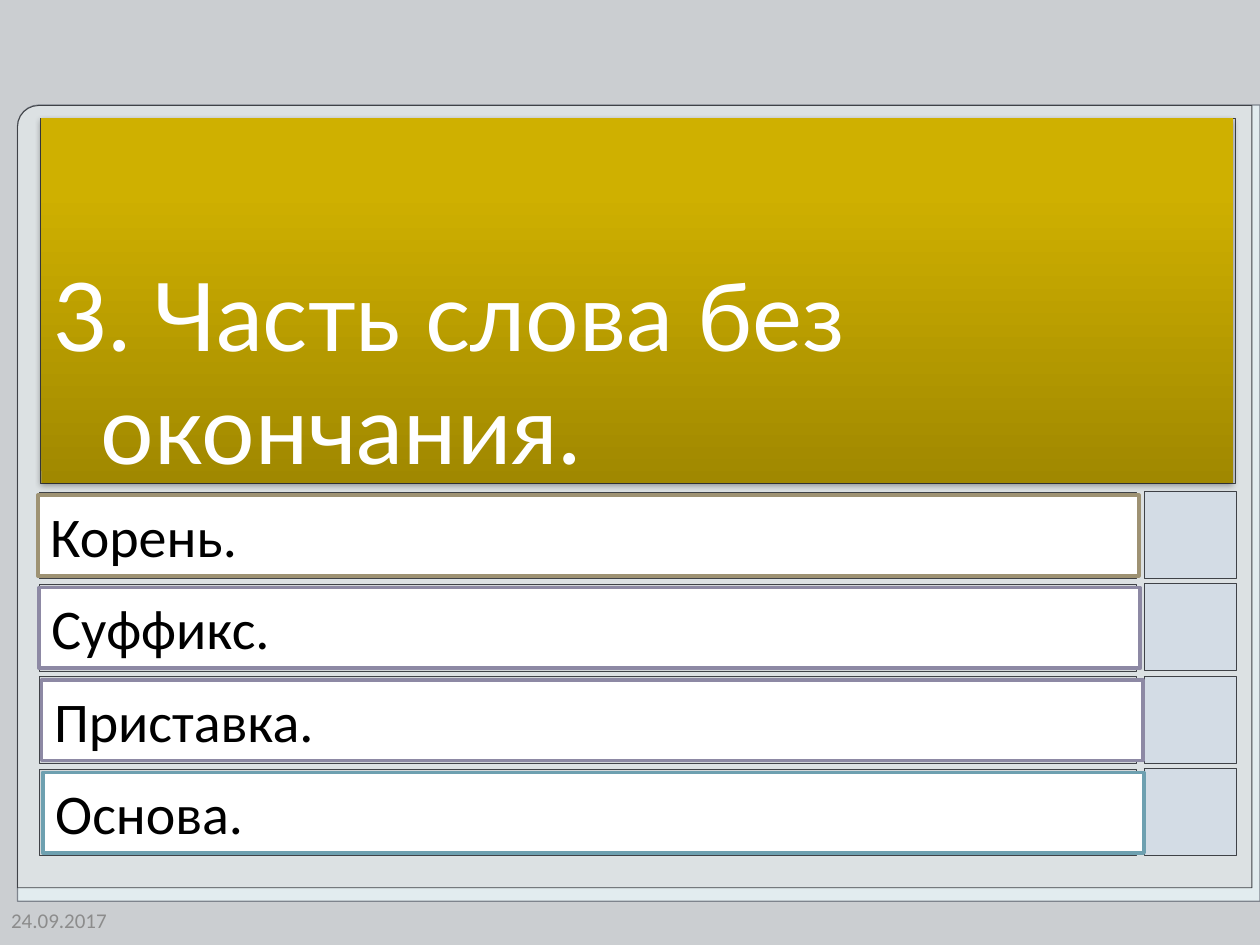
from dataclasses import dataclass

from lxml import etree
from pptx import Presentation
from pptx.dml.color import RGBColor
from pptx.enum import shapes, text
from pptx.oxml import ns, parse_xml
from pptx.util import Pt


@dataclass(frozen=True)
class Theme:
    background: str = "CBCED1"
    back_card: str = "E2ECEF"
    back_line: str = "7E848D"
    card: str = "D8D8D8"
    frame: str = "CBCED1"
    frame_line: str = "3F4247"
    tile: str = "CCD8E7"
    answer: str = "FFFFFF"
    answer_text: str = "000000"
    question_text: str = "FFFFFF"
    date_text: str = "8C8C8C"
    gradient: tuple = ((0, "A08800"), (80, "CFB000"), (100, "D0B100"))
    question_font: str = "Lato"
    body_font: str = "Calibri"
    question_size: float = 54
    answer_size: float = 32
    date_size: float = 12


THEME = Theme()
HANGING = 27
ROW_PITCH = 52.8
ANSWERS = [
    ("Корень.", 21.6, "9E9273"),
    ("Суффикс.", 22.3, "8D89A4"),
    ("Приставка.", 23.8, "8D89A4"),
    ("Основа.", 24.5, "6EA0B0"),
]


def add_panel(slide, box, fill, line=None, width=0.5, alpha=None,
              kind=shapes.MSO_SHAPE.RECTANGLE):
    """Add a flat shape; alpha is the opacity of its fill in percent."""
    shape = slide.shapes.add_shape(kind, *map(Pt, box))
    shape.shadow.inherit = False
    if fill:
        shape.fill.solid()
        shape.fill.fore_color.rgb = RGBColor.from_string(fill)
    if alpha:
        color = shape._element.spPr.find(".//" + ns.qn("a:srgbClr"))
        etree.SubElement(color, ns.qn("a:alpha")).set("val", str(alpha * 1000))
    if line:
        shape.line.color.rgb = RGBColor.from_string(line)
        shape.line.width = Pt(width)
    else:
        shape.line.fill.background()
    return shape


def add_card(slide, box, fill, line, width, alpha=None):
    """Add a panel whose top left corner is round."""
    shape = add_panel(slide, box, fill, line, width, alpha,
                      shapes.MSO_SHAPE.ROUND_1_RECTANGLE)
    shape.adjustments[0] = 0.027
    shape._element.spPr.find(ns.qn("a:xfrm")).set("flipH", "1")


def write(shape, wording, font, size, color, hanging=0, **frame_format):
    frame = shape.text_frame
    frame.word_wrap = True
    for name, value in frame_format.items():
        setattr(frame, name, value)
    paragraph = frame.paragraphs[0]
    paragraph.alignment = text.PP_ALIGN.LEFT
    if hanging:
        properties = paragraph._p.get_or_add_pPr()
        properties.set("marL", str(Pt(hanging)))
        properties.set("indent", str(-Pt(hanging)))
    run = paragraph.add_run()
    run.text = wording
    for name, value in {"name": font, "size": Pt(size)}.items():
        setattr(run.font, name, value)
    run.font.color.rgb = RGBColor.from_string(color)


def add_question(slide, box, wording):
    shape = add_panel(slide, box, None)
    properties = shape._element.spPr
    stops = "".join(
        f'<a:gs pos="{position * 1000}"><a:srgbClr val="{color}"/></a:gs>'
        for position, color in THEME.gradient)
    gradient = parse_xml(
        f'<a:gradFill {ns.nsdecls("a")} rotWithShape="1"><a:gsLst>{stops}</a:gsLst>'
        '<a:lin ang="16200000" scaled="0"/></a:gradFill>')
    properties.find(ns.qn("a:prstGeom")).addnext(gradient)
    shadow = parse_xml(
        f'<a:outerShdw {ns.nsdecls("a")} blurRad="{Pt(3.1)}" dist="{Pt(1.8)}" '
        'dir="5400000" rotWithShape="0"><a:srgbClr val="000000">'
        '<a:alpha val="35000"/></a:srgbClr></a:outerShdw>')
    properties.find(ns.qn("a:effectLst")).append(shadow)
    write(shape, wording, THEME.question_font, THEME.question_size,
          THEME.question_text, HANGING, margin_bottom=0,
          vertical_anchor=text.MSO_ANCHOR.BOTTOM)


def add_answer_frames(slide):
    for row in range(len(ANSWERS)):
        offset = row * ROW_PITCH
        add_panel(slide, (22.7, 281.2 + offset, 627, 49.5),
                  THEME.frame, THEME.frame_line, alpha=50)
        add_panel(slide, (653.8, 280.8 + offset, 52.6, 49.7),
                  THEME.tile, THEME.frame_line, alpha=50)


def add_answers(slide):
    for row, (wording, left, line) in enumerate(ANSWERS):
        shape = add_panel(slide, (left, 283 + row * ROW_PITCH, 629.3, 46.1),
                          THEME.answer, line, 2)
        write(shape, wording, THEME.body_font, THEME.answer_size,
              THEME.answer_text, HANGING, vertical_anchor=text.MSO_ANCHOR.TOP)


def add_date(slide, box, wording):
    shape = slide.shapes.add_textbox(*map(Pt, box))
    write(shape, wording, THEME.body_font, THEME.date_size, THEME.date_text,
          vertical_anchor=text.MSO_ANCHOR.MIDDLE)


def main():
    presentation = Presentation()
    presentation.slide_width, presentation.slide_height = Pt(720), Pt(540)
    slide = presentation.slides.add_slide(presentation.slide_layouts[6])
    background = slide.background.fill
    background.solid()
    background.fore_color.rgb = RGBColor.from_string(THEME.background)

    add_card(slide, (10, 60, 710, 455), THEME.back_card, THEME.back_line, 0.75)
    add_card(slide, (10, 60.3, 705.4, 447), THEME.card, THEME.frame_line, 0.5, 50)
    add_panel(slide, (23, 67.5, 683.3, 208.8), THEME.frame, THEME.frame_line, alpha=50)
    add_answer_frames(slide)
    add_date(slide, (-0.7, 511.2, 84.2, 28.8), "24.09.2017")
    add_question(slide, (23.6, 67.5, 681.1, 208.8), "3. Часть слова без окончания.")
    add_answers(slide)
    presentation.save("out.pptx")


if __name__ == "__main__":
    main()
